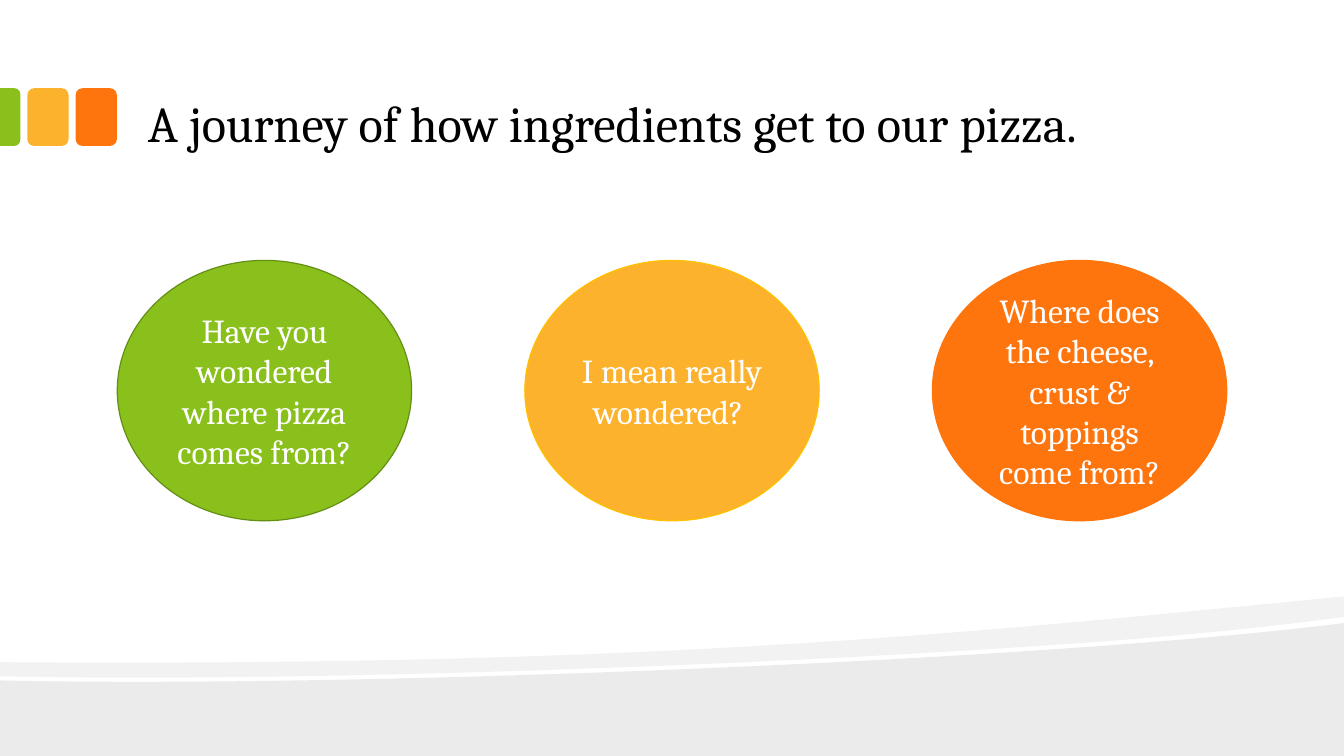
from dataclasses import dataclass

from lxml import etree
from pptx import Presentation
from pptx import util as u
from pptx.dml import color
from pptx.enum import shapes, text
from pptx.oxml import ns

Pt = u.Pt
KIND = shapes.MSO_SHAPE


@dataclass(frozen=True)
class Theme:
    """Colours, font and type sizes of the slide."""
    green: str = "89C01C"
    amber: str = "FCB22C"
    orange: str = "FE750E"
    moss: str = "658E15"
    gold: str = "FFC000"
    black: str = "000000"
    white: str = "FFFFFF"
    font: str = "Cambria"
    head: int = 36
    body: int = 24


T = Theme()


def rgb(code):
    """Turn a hex code into a colour."""
    return color.RGBColor.from_string(code)


def paint(shape, fill, line=None, alpha=None):
    """Set the fill, outline and opacity of a shape."""
    shape.shadow.inherit = False
    shape.fill.solid()
    shape.fill.fore_color.rgb = rgb(fill)
    if line:
        shape.line.color.rgb = rgb(line)
        shape.line.width = Pt(0.85)
    else:
        shape.line.fill.background()
    if alpha:
        tint = shape.fill._xPr.find(".//" + ns.qn("a:srgbClr"))
        etree.SubElement(tint, ns.qn("a:alpha"), val=str(alpha * 1000))


def write(shape, words, size, ink, align=text.PP_ALIGN.LEFT,
          anchor=text.MSO_ANCHOR.MIDDLE, pad=(7.2, 3.6)):
    """Put formatted text into a shape."""
    frame = shape.text_frame
    frame.word_wrap = True
    frame.vertical_anchor = anchor
    frame.margin_left = frame.margin_right = Pt(pad[0])
    frame.margin_top = frame.margin_bottom = Pt(pad[1])
    para = frame.paragraphs[0]
    para.alignment = align
    run = para.add_run()
    run.text = words
    run.font.name = T.font
    run.font.size = Pt(size)
    run.font.color.rgb = rgb(ink)


def outline(slide, x, y, start, parts):
    """Draw a closed outline; a part of three points is a cubic curve."""
    dots = [(Pt(x + a), Pt(y + b)) for a, b in [start] + sum(parts, [])]
    pen = slide.shapes.build_freeform(*dots[0], scale=1.0)
    pen.add_line_segments(dots[1:], close=True)
    shape = pen.convert_to_shape()
    legs = iter(list(shape._element.iter(ns.qn("a:lnTo"))))
    for part in parts:
        group = [next(legs) for _ in part]
        if len(group) == 3:
            bend = etree.Element(ns.qn("a:cubicBezTo"))
            group[0].addprevious(bend)
            for leg in group:
                bend.append(leg[0])
                leg.getparent().remove(leg)
    return shape


def waves(slide, x, y, w, h):
    """Draw the two grey bands at the foot of the slide."""
    low = [[(w, h)], [(0, h)], [(0, 60)],
           [(253.4, 65.8), (750.2, 45.6), (w, 19)]]
    high = [[(w, 14.6)],
            [(903.6, 22.6), (827.3, 29.8), (740.9, 35.5)],
            [(502.6, 51.4), (185.8, 61.4), (0, 57.1)],
            [(0, 47)],
            [(469.4, 50.6), (699.1, 25.4), (w, 0)]]
    for start, parts, alpha in (((w, 19), low, 8), ((w, 0), high, 5)):
        paint(outline(slide, x, y, start, parts), T.black, alpha=alpha)


def tabs(slide, x, y, w, h):
    """Draw the three coloured tabs that run in from the left edge."""
    wide, gap = 29.5, 5
    for i, fill in enumerate((T.orange, T.amber)):
        left = x + w - wide - i * (wide + gap)
        tab = slide.shapes.add_shape(KIND.ROUNDED_RECTANGLE,
                                     Pt(left), Pt(y), Pt(wide), Pt(h))
        paint(tab, fill)
    thin = w - 2 * (wide + gap)
    tab = slide.shapes.add_shape(KIND.ROUND_2_SAME_RECTANGLE,
                                 Pt(x + (thin - h) / 2), Pt(y + (h - thin) / 2),
                                 Pt(h), Pt(thin))
    tab.rotation = 90
    tab.adjustments[0] = 0.29
    paint(tab, T.green)


def title(slide, x, y, w, h):
    """Write the slide title."""
    box = slide.shapes.add_textbox(Pt(x), Pt(y), Pt(w), Pt(h))
    write(box, "A journey of how ingredients get to our pizza.", T.head, T.black,
          anchor=text.MSO_ANCHOR.BOTTOM, pad=(9.6, 4.8))


def discs(slide, x, y, w, h):
    """Spread the three question discs over the box."""
    wide = 210.25
    items = (
        ("Have you wondered where pizza comes from?", T.green, T.moss),
        ("I mean really wondered? ", T.amber, T.gold),
        ("Where does the cheese, crust & toppings come from?", T.orange, T.orange),
    )
    step = (w - wide) / (len(items) - 1)
    for i, (words, fill, line) in enumerate(items):
        disc = slide.shapes.add_shape(KIND.OVAL, Pt(x + i * step), Pt(y),
                                      Pt(wide), Pt(h))
        paint(disc, fill, line)
        write(disc, words, T.body, T.white, align=text.PP_ALIGN.CENTER)


def main():
    """Build the slide and save it."""
    deck = Presentation()
    deck.slide_width, deck.slide_height = Pt(960), Pt(540)
    slide = deck.slides.add_slide(deck.slide_layouts[6])
    waves(slide, 0, 426, 960, 114)
    tabs(slide, 0, 63, 83.5, 41.25)
    title(slide, 96, 12, 767.5, 102)
    discs(slide, 83.75, 186, 792.5, 186)
    deck.save("out.pptx")


if __name__ == "__main__":
    main()
